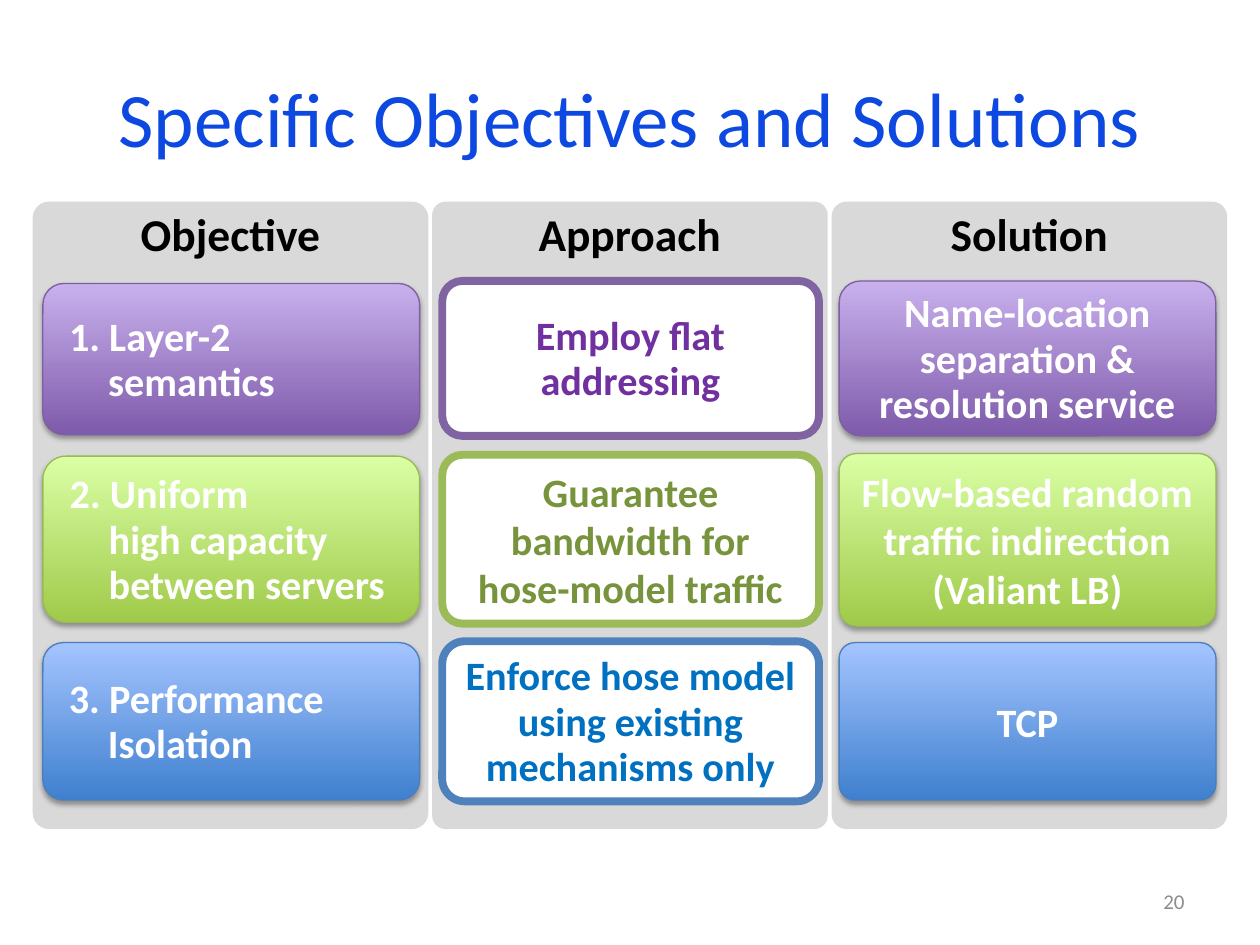
from lxml.etree import SubElement
from pptx import Presentation
from pptx.dml.color import RGBColor
from pptx.enum.shapes import MSO_SHAPE
from pptx.enum.text import MSO_ANCHOR, PP_ALIGN
from pptx.oxml.ns import qn
from pptx.util import Inches, Pt

FONT = "Calibri"
CARD_W = 2.99

# Per row: gradient bottom, gradient top, thin line, thick line, approach text
ROWS = [
    ("7F5BAB", "C8B0ED", "7D60A0", "8064A2", "7030A0"),
    ("A0CA4A", "DAFFA5", "98B955", "9BBB59", "77933C"),
    ("3F80CE", "A4C4FF", "4B7EBC", "4F81BD", "0070C0"),
]

# Per column: heading, panel left, panel corner, card left, cards
# Per card: text, top, height, corner, line spacing in points
COLUMNS = [
    ("Objective", 0.26, 0.041, 0.34, [
        ("1. Layer-2 semantics", 2.25, 1.2, 0.14, 26),
        ("2. Uniform\vhigh capacity between servers", 3.62, 1.32, 0.14, 26),
        ("3. Performance Isolation", 5.1, 1.25, 0.13, 26)]),
    ("Approach", 3.43, 0.034, 3.51, [
        ("Employ flat addressing", 2.23, 1.23, 0.13, 26),
        ("Guarantee bandwidth for\vhose-model traffic", 3.61, 1.34, 0.12, None),
        ("Enforce hose model using existing mechanisms only",
         5.09, 1.27, 0.14, 26)]),
    ("Solution", 6.6, 0.038, 6.66, [
        ("Name-location separation & resolution service",
         2.23, 1.23, 0.14, 26),
        ("Flow-based random traffic indirection\v(Valiant LB)",
         3.6, 1.37, 0.1, None),
        ("TCP", 5.1, 1.25, 0.1, None)]),
]


def color(text):
    return RGBColor.from_string(text)


def write(shape, text, size, tone, align=PP_ALIGN.CENTER, bold=False,
          anchor=MSO_ANCHOR.MIDDLE, inset=0.0):
    """Fill the shape with one paragraph and return it."""
    frame = shape.text_frame
    frame.word_wrap = True
    frame.vertical_anchor = anchor
    frame.margin_left = frame.margin_right = Inches(inset)
    frame.margin_top = frame.margin_bottom = Inches(inset / 2)
    para = frame.paragraphs[0]
    para.text = text
    para.alignment = align
    font = para.font
    font.name, font.size, font.bold = FONT, Pt(size), bold
    font.color.rgb = color(tone)
    return para


def add_box(slide, left, top, width, height, corner):
    box = slide.shapes.add_shape(
        MSO_SHAPE.ROUNDED_RECTANGLE,
        Inches(left), Inches(top), Inches(width), Inches(height))
    box.adjustments[0] = corner
    box.shadow.inherit = False
    return box


def add_label(slide, text, left, top, width, height, size, tone, align):
    label = slide.shapes.add_textbox(
        Inches(left), Inches(top), Inches(width), Inches(height))
    write(label, text, size, tone, align, inset=0.1)


def add_panel(slide, heading, left, corner):
    panel = add_box(slide, left, 1.6, 3.14, 4.98, corner)
    panel.fill.solid()
    panel.fill.fore_color.rgb = color("D9D9D9")
    panel.line.fill.background()
    write(panel, heading, 26, "000000", bold=True, anchor=MSO_ANCHOR.TOP)


def set_line(shape, tone, width):
    shape.line.color.rgb = color(tone)
    shape.line.width = Pt(width)


def shade(shape, low, high):
    """Vertical gradient, low colour at the bottom."""
    shape.fill.gradient()
    shape.fill.gradient_angle = 90
    for stop, tone in zip(shape.fill.gradient_stops, (low, high)):
        stop.color.rgb = color(tone)


def cast_shadow(shape):
    effects = shape._element.spPr.find(qn("a:effectLst"))
    shadow = SubElement(effects, qn("a:outerShdw"), blurRad=str(Pt(3.1)),
                        dist=str(Pt(1.8)), dir="5400000", rotWithShape="0")
    black = SubElement(shadow, qn("a:srgbClr"), val="000000")
    SubElement(black, qn("a:alpha"), val="35000")


def add_card(slide, column, left, card, tones):
    text, top, height, corner, spacing = card
    low, high, thin, thick, ink = tones
    box = add_box(slide, left, top, CARD_W, height, corner)
    if column == "Approach":
        box.fill.solid()
        box.fill.fore_color.rgb = color("FFFFFF")
        set_line(box, thick, 4.5)
    else:
        ink = "FFFFFF"
        shade(box, low, high)
        set_line(box, thin, 0.75)
        cast_shadow(box)
    listed = column == "Objective"
    para = write(box, text, 23, ink, bold=True,
                 align=PP_ALIGN.LEFT if listed else PP_ALIGN.CENTER,
                 inset=0.1 if listed else 0)
    if spacing:
        para.line_spacing = Pt(spacing)
    if listed:
        props = para._p.get_or_add_pPr()
        props.set("marL", str(Inches(0.37)))
        props.set("indent", str(Inches(-0.31)))


def main():
    deck = Presentation()
    deck.slide_width, deck.slide_height = Inches(10), Inches(7.5)
    slide = deck.slides.add_slide(deck.slide_layouts[6])
    add_label(slide, "Specific Objectives and Solutions",
              0.5, 0.3, 9, 1.25, 44, "0D49E1", PP_ALIGN.CENTER)
    for heading, left, corner, inner, cards in COLUMNS:
        add_panel(slide, heading, left, corner)
        for card, tones in zip(cards, ROWS):
            add_card(slide, heading, inner, card, tones)
    add_label(slide, "20", 7.17, 6.95, 2.33, 0.4, 12, "8C8C8C",
              PP_ALIGN.RIGHT)
    deck.save("out.pptx")


if __name__ == "__main__":
    main()
